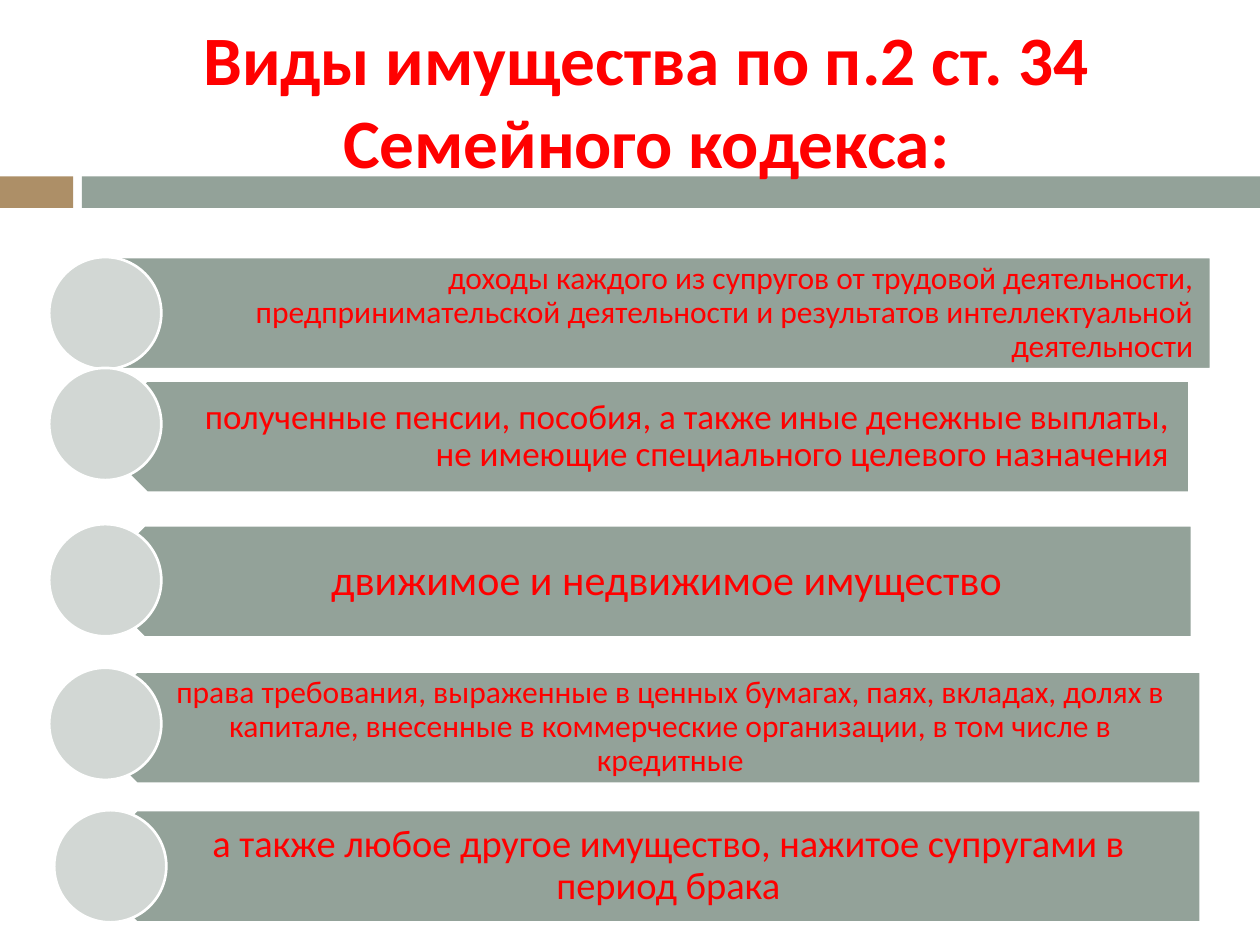
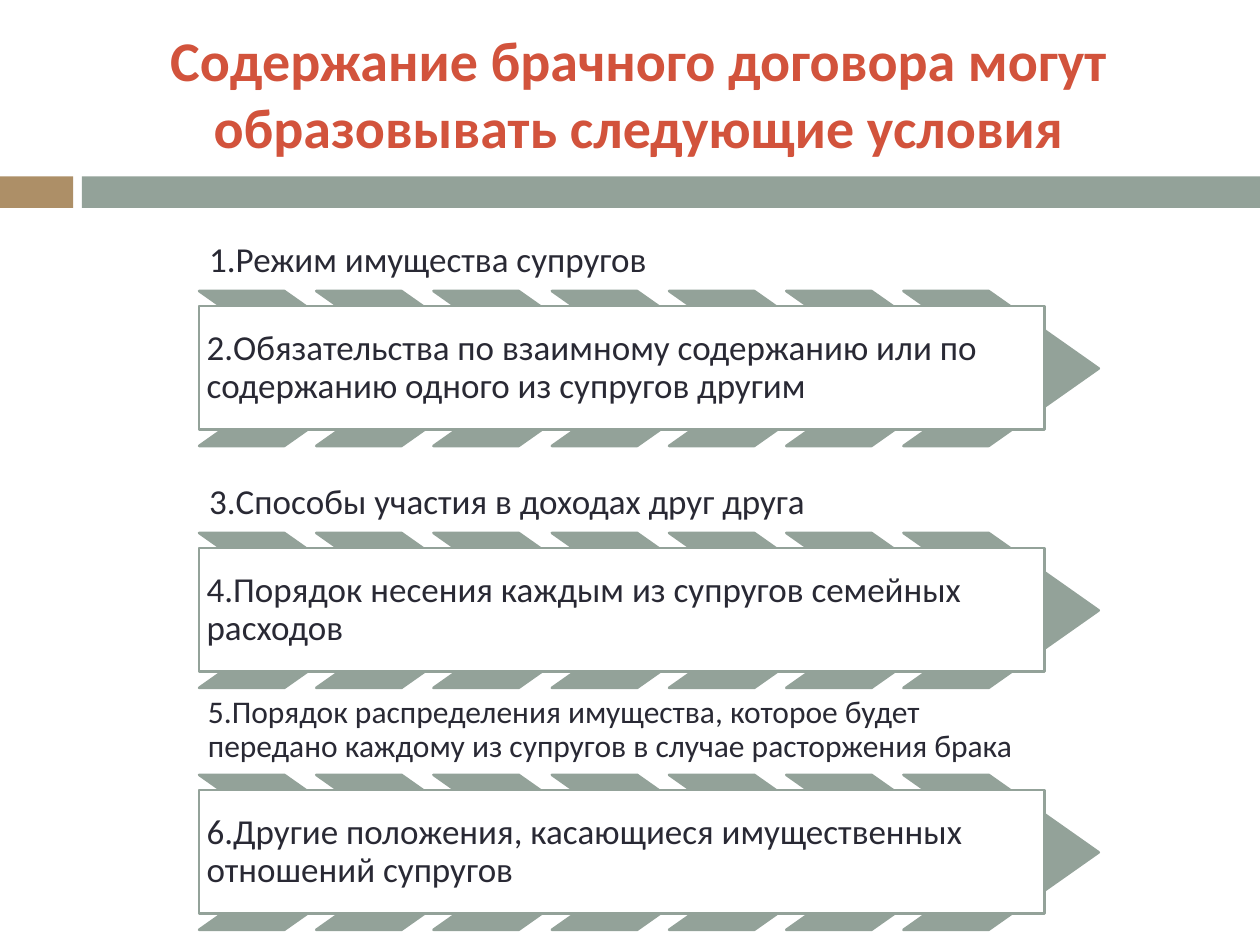
from dataclasses import dataclass

from pptx import Presentation
from pptx.dml.color import RGBColor
from pptx.enum.shapes import MSO_SHAPE as Shape
from pptx.enum.text import MSO_ANCHOR as Anchor, PP_ALIGN as Align
from pptx.util import Emu, Pt

PX = 9144  # EMU in one px, 100 px to the inch


@dataclass(frozen=True)
class Theme:
    font: str = "Calibri"
    sage: str = "93A299"
    sand: str = "AD8F67"
    pale: str = "D2D7D4"
    white: str = "FFFFFF"
    red: str = "FF0000"
    brick: str = "D2533C"
    ink: str = "292934"
    outline: float = 1.5
    title_large: float = 39.6
    title: float = 32
    heading: float = 24
    subheading: float = 22
    body: float = 20
    small: float = 18


def rgb(code):
    return RGBColor.from_string(code)


def px(*lengths):
    return [Emu(length * PX) for length in lengths]


def assign(target, values):
    for name, value in values.items():
        setattr(target, name, value)


class Deck:
    def __init__(self, theme):
        self.theme = theme
        self.file = Presentation()
        assign(self.file, dict(zip(("slide_width", "slide_height"), px(1000, 750))))
        self.page = None

    def add_page(self, title, place, size, color):
        """Start a page with the shared bands and title style."""
        self.page = self.file.slides.add_slide(self.file.slide_layouts[6])
        self.shape(Shape.RECTANGLE, (0, 140, 58, 25), self.theme.sand)
        self.shape(Shape.RECTANGLE, (65, 140, 935, 25), self.theme.sage)
        self.text(title, place, size, color, align=Align.CENTER,
                  insets=(10, 5, 10, 5), bold=True, spacing=1.0)

    def shape(self, kind, place, fill, line=None, rotation=0, adjust=None):
        box = self.page.shapes.add_shape(kind, *px(*place))
        box.shadow.inherit = False
        box.rotation = rotation
        box.fill.solid()
        box.fill.fore_color.rgb = rgb(fill)
        if line:
            box.line.color.rgb = rgb(line)
            box.line.width = Pt(self.theme.outline)
        else:
            box.line.fill.background()
        if adjust is not None:
            box.adjustments[0] = adjust
        return box

    def text(self, words, place, size, color, **style):
        box = self.page.shapes.add_textbox(*px(*place))
        self.set_words(box, words, size, color, **style)

    def set_words(self, box, words, size, color, align=Align.LEFT,
                  anchor=Anchor.MIDDLE, insets=(0, 0, 0, 0), bold=False, spacing=0.9):
        frame = box.text_frame
        sides = ("margin_left", "margin_top", "margin_right", "margin_bottom")
        assign(frame, {"word_wrap": True, "vertical_anchor": anchor,
                       **dict(zip(sides, px(*insets)))})
        para = frame.paragraphs[0]
        assign(para, {"alignment": align, "line_spacing": spacing})
        span = para.add_run()
        span.text = words
        assign(span.font, {"name": self.theme.font, "size": Pt(size), "bold": bold})
        span.font.color.rgb = rgb(color)

    def property_row(self, words, plate, circle, size, align, pad, right):
        """Left-pointing plate with its text and a circle over the tip."""
        left, top, width = plate
        side, indent = 89, 22
        self.shape(Shape.PENTAGON, (left, top, width, side), self.theme.sage,
                   self.theme.white, rotation=180)
        self.text(words, (left + indent, top, width - indent, side), size,
                  self.theme.red, align=align, insets=(39, pad, right, pad))
        self.shape(Shape.OVAL, (*circle, side, side), self.theme.pale, self.theme.white)

    def condition_block(self, top, heading, size, pad, detail):
        """Heading, a run of chevrons and a framed detail over them."""
        theme, left, chevrons, reach = self.theme, 158, 7, 559
        self.text(heading, (left, top, 662, 60), size, theme.ink,
                  anchor=Anchor.BOTTOM, insets=(pad,) * 4)
        for index in range(chevrons):
            offset = round(index * reach / (chevrons - 1))
            self.shape(Shape.CHEVRON, (left + offset, top + 61, 155, 123),
                       theme.sage, theme.sage, adjust=0.71)
        frame = self.shape(Shape.RECTANGLE, (left, top + 73, 671, 98),
                           theme.white, theme.sage)
        self.set_words(frame, detail, theme.body, theme.ink, insets=(6,) * 4)


def property_page(deck):
    theme = deck.theme
    deck.add_page("Виды имущества по п.2 ст. 34 Семейного кодекса:",
                  (67, 25, 892, 108), theme.title_large, theme.red)
    # text, plate (left, top, width), circle (left, top), size, align, pad, right inset
    rows = [
        ("доходы каждого из супругов от трудовой деятельности, предпринимательской "
         "деятельности и результатов интеллектуальной деятельности",
         (51, 204, 910), (39, 204), theme.small, Align.RIGHT, 7, 14),
        ("полученные пенсии, пособия, а также иные денежные выплаты, "
         "не имеющие специального целевого назначения",
         (72, 302, 872), (39, 292), theme.body, Align.RIGHT, 8, 16),
        ("движимое и недвижимое имущество",
         (70, 417, 876), (39, 416), theme.heading, Align.CENTER, 10, 19),
        ("права требования, выраженные в ценных бумагах, паях, вкладах, долях в "
         "капитале, внесенные в коммерческие организации, в том числе в кредитные",
         (64, 533, 889), (39, 530), theme.small, Align.CENTER, 7, 14),
        ("а также любое другое имущество, нажитое супругами в период брака",
         (64, 643, 889), (43, 643), theme.subheading, Align.CENTER, 9, 17),
    ]
    for row in rows:
        deck.property_row(*row)


def contract_page(deck):
    theme = deck.theme
    deck.add_page("Содержание брачного договора могут образовывать следующие условия",
                  (57, 0, 900, 147), theme.title, theme.brick)
    # heading, size, inset, framed detail
    blocks = [
        ("1.Режим имущества супругов", theme.body, 8,
         "2.Обязательства по взаимному содержанию или по содержанию "
         "одного из супругов другим"),
        ("3.Способы участия в доходах друг друга", theme.body, 8,
         "4.Порядок несения каждым из супругов семейных расходов"),
        ("5.Порядок распределения имущества, которое будет передано каждому "
         "из супругов в случае расторжения брака", theme.small, 7,
         "6.Другие положения, касающиеся имущественных отношений супругов"),
    ]
    for index, block in enumerate(blocks):
        deck.condition_block(170 + 192 * index, *block)


def main():
    deck = Deck(Theme())
    property_page(deck)
    contract_page(deck)
    deck.file.save("out.pptx")


if __name__ == "__main__":
    main()
